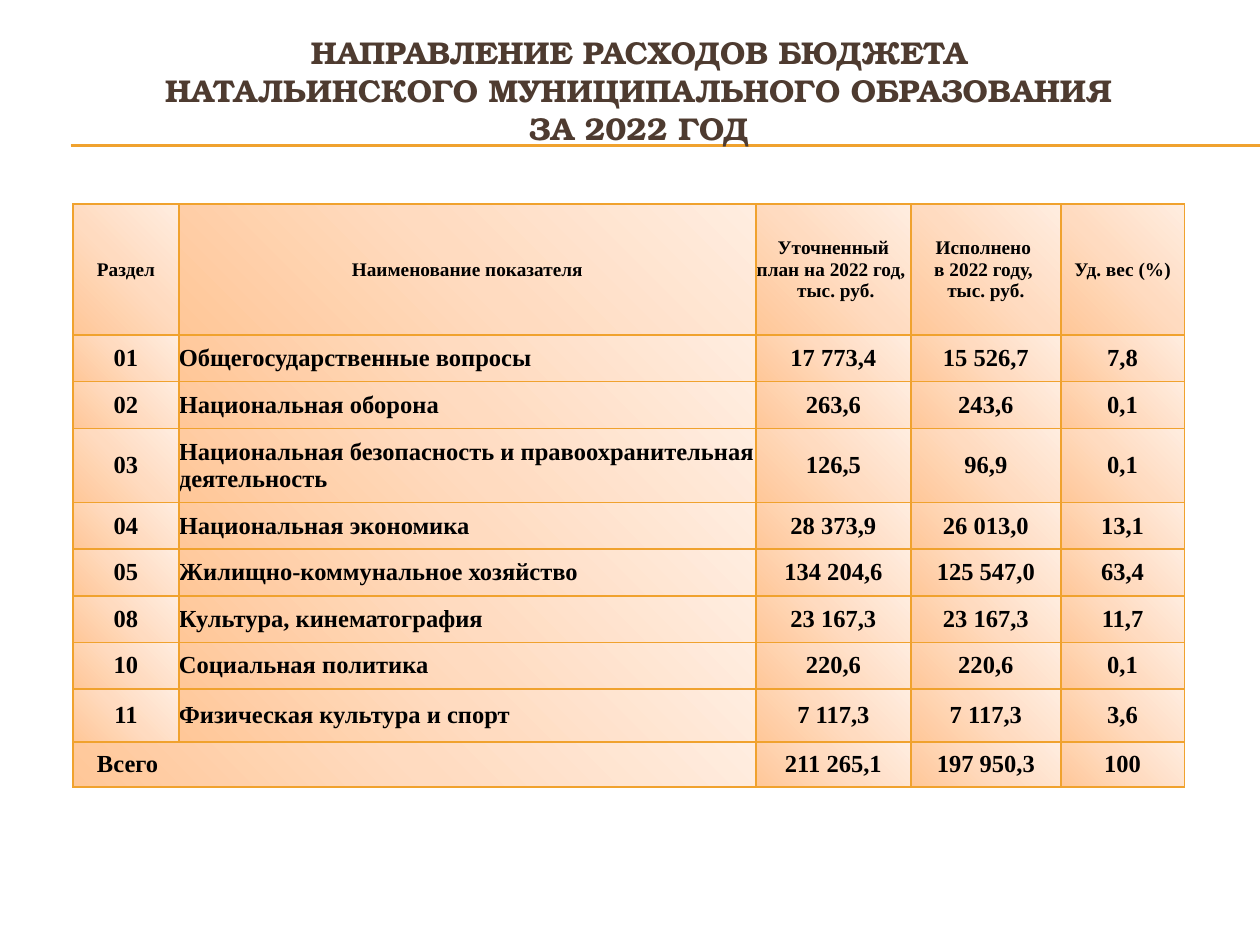
import lxml.etree
import pptx
import pptx.dml.color
import pptx.enum.shapes
import pptx.enum.text
import pptx.oxml.ns
import pptx.util

Inches = pptx.util.Inches
RGBColor = pptx.dml.color.RGBColor
PP_ALIGN = pptx.enum.text.PP_ALIGN
MIDDLE = pptx.enum.text.MSO_ANCHOR.MIDDLE

GOLD = RGBColor(0xF0, 0xA2, 0x2E)
BROWN = RGBColor(0x4E, 0x3B, 0x30)
BLACK = RGBColor(0, 0, 0)
GRADIENT = [
    (0, RGBColor(0xFF, 0xC7, 0x98)),
    (50, RGBColor(0xFF, 0xDB, 0xC0)),
    (100, RGBColor(0xFF, 0xED, 0xE0)),
]

COL_WIDTHS = [0.84, 4.58, 1.23, 1.19, 0.98]
ROW_HEIGHTS = [1.04, 0.37, 0.37, 0.59, 0.37, 0.37, 0.37, 0.37, 0.42, 0.36]
ROWS = [
    ["Раздел", "Наименование показателя", "Уточненный план на 2022 год, \n тыс. руб.",
     "Исполнено \nв 2022 году, \nтыс. руб.", "Уд. вес (%)"],
    ["01", "Общегосударственные вопросы", "17 773,4", "15 526,7", "7,8"],
    ["02", "Национальная оборона", "263,6", "243,6", "0,1"],
    ["03", "Национальная безопасность и правоохранительная деятельность", "126,5", "96,9", "0,1"],
    ["04", "Национальная экономика", "28 373,9", "26 013,0", "13,1"],
    ["05", "Жилищно-коммунальное хозяйство", "134 204,6", "125 547,0", "63,4"],
    ["08", "Культура, кинематография", "23 167,3", "23 167,3", "11,7"],
    ["10", "Социальная политика", "220,6", "220,6", "0,1"],
    ["11", "Физическая культура и спорт", "7 117,3", "7 117,3", "3,6"],
    ["Всего", "", "211 265,1", "197 950,3", "100"],
]


def write(tf, text, size=14, font="Times New Roman", color=BLACK, align=PP_ALIGN.CENTER):
    """Fill a text frame with bold text, one paragraph per line."""
    tf.text = text
    for p in tf.paragraphs:
        p.alignment = align
        for r in p.runs:
            r.font.size = pptx.util.Pt(size)
            r.font.name = font
            r.font.bold = True
            r.font.color.rgb = color


def style_cell(cell):
    """Add gold borders and a gradient rising to the top right."""
    ns = pptx.oxml.ns.nsdecls("a")
    tcPr = cell._tc.get_or_add_tcPr()
    for side in "LRTB":
        tcPr.append(lxml.etree.fromstring(
            f'<a:ln{side} {ns} w="12700"><a:solidFill><a:srgbClr val="{GOLD}"/>'
            f'</a:solidFill></a:ln{side}>'))
    stops = "".join(f'<a:gs pos="{pos * 1000}"><a:srgbClr val="{color}"/></a:gs>'
                    for pos, color in GRADIENT)
    tcPr.append(lxml.etree.fromstring(
        f'<a:gradFill {ns} rotWithShape="1"><a:gsLst>{stops}</a:gsLst>'
        f'<a:lin ang="{315 * 60000}" scaled="0"/></a:gradFill>'))


prs = pptx.Presentation()
prs.slide_width, prs.slide_height = Inches(10), Inches(7.5)
s = prs.slides.add_slide(prs.slide_layouts[5])

# Double rule under the title
for y in (1.15, 1.16):
    rule = s.shapes.add_connector(pptx.enum.shapes.MSO_CONNECTOR.STRAIGHT,
                                  Inches(0.56), Inches(y), Inches(10), Inches(y))
    rule.line.color.rgb = GOLD
    rule.line.width = pptx.util.Pt(0.75)
    lxml.etree.SubElement(rule.element.spPr, pptx.oxml.ns.qn("a:effectLst"))

# Title, in front of the rules
title = s.shapes.title
title.left, title.top = Inches(1.14), Inches(0.28)
title.width, title.height = Inches(7.86), Inches(0.87)
title.element.getparent().append(title.element)
tf = title.text_frame
tf.word_wrap = True
tf.auto_size = pptx.enum.text.MSO_AUTO_SIZE.NONE
tf.vertical_anchor = MIDDLE
write(tf, "НАПРАВЛЕНИЕ РАСХОДОВ БЮДЖЕТА НАТАЛЬИНСКОГО МУНИЦИПАЛЬНОГО ОБРАЗОВАНИЯ ЗА 2022 ГОД",
      size=18, font="TeX Gyre Bonum", color=BROWN)

# Budget table
table = s.shapes.add_table(len(ROWS), len(COL_WIDTHS), Inches(0.58), Inches(1.62),
                           Inches(sum(COL_WIDTHS)), Inches(sum(ROW_HEIGHTS))).table
for column, width in zip(table.columns, COL_WIDTHS):
    column.width = Inches(width)
for row, height in zip(table.rows, ROW_HEIGHTS):
    row.height = Inches(height)

last = len(ROWS) - 1
table.cell(last, 0).merge(table.cell(last, 1))
for i, values in enumerate(ROWS):
    for j, text in enumerate(values):
        cell = table.cell(i, j)
        style_cell(cell)
        if cell.is_spanned:
            continue
        is_total = cell.is_merge_origin
        is_left = is_total or (i > 0 and j == 1)
        cell.vertical_anchor = MIDDLE
        cell.margin_left = Inches(0.19 if is_total else 0)
        cell.margin_right = cell.margin_top = cell.margin_bottom = 0
        write(cell.text_frame, text, size=14 if i else 11,
              align=PP_ALIGN.LEFT if is_left else PP_ALIGN.CENTER)

prs.save("out.pptx")
